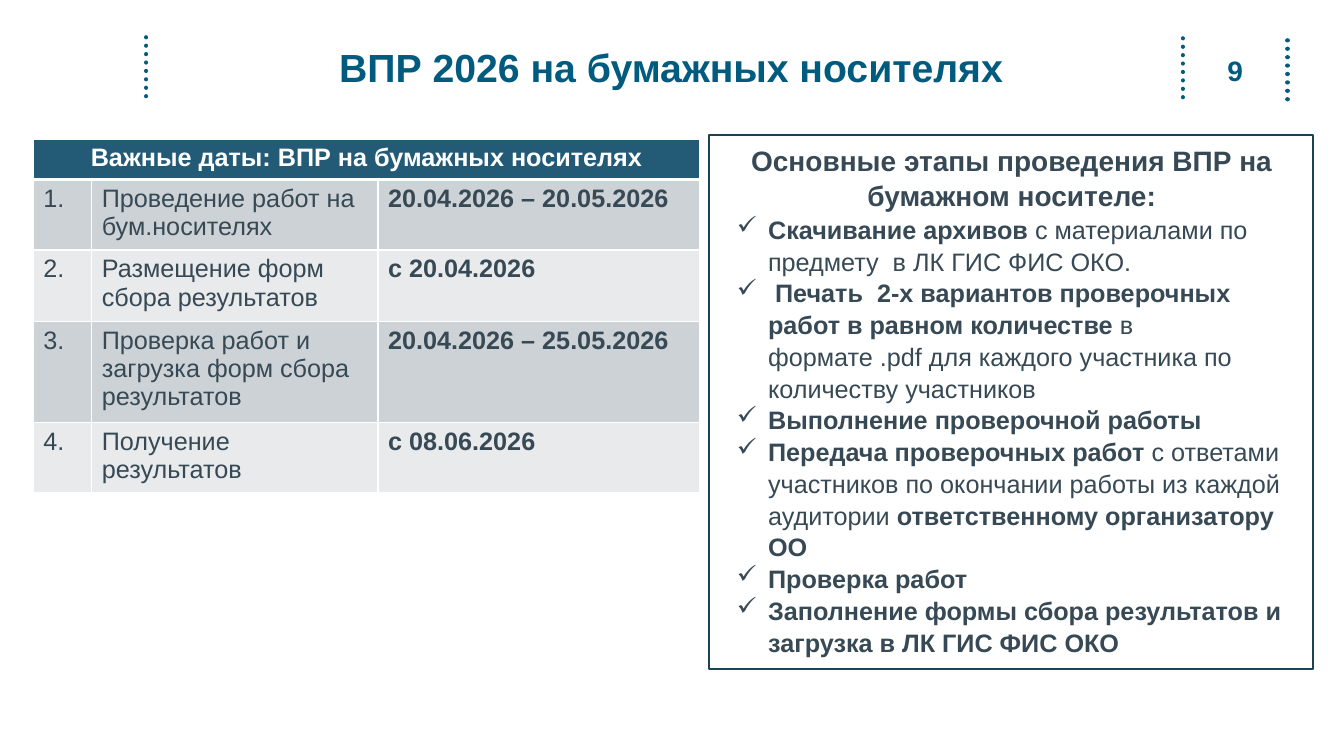
from dataclasses import dataclass

from lxml.etree import SubElement
from pptx import Presentation
from pptx.dml.color import RGBColor
from pptx.enum.dml import MSO_LINE
from pptx.enum.shapes import MSO_CONNECTOR, MSO_SHAPE
from pptx.enum.text import MSO_ANCHOR, PP_ALIGN
from pptx.oxml.ns import qn
from pptx.slide import Slide
from pptx.table import _Cell
from pptx.text.text import TextFrame, _Paragraph
from pptx.util import Emu, Pt

EMU_PER_PX = 9144  # 100 px to the inch


@dataclass(frozen=True)
class Theme:
    font: str = "Arial"
    accent: str = "005B7E"
    frame: str = "1A4358"
    header: str = "235B77"
    bands: tuple[str, str] = ("CDD2D6", "E8EAEC")
    text: str = "374955"
    white: str = "FFFFFF"
    title_size: int = 28
    heading_size: int = 20
    body_size: int = 18


@dataclass(frozen=True)
class Box:
    left: int
    top: int
    width: int
    height: int

    def emu(self) -> tuple[Emu, Emu, Emu, Emu]:
        return px(self.left), px(self.top), px(self.width), px(self.height)


@dataclass(frozen=True)
class DottedLine:
    x: int
    top: int
    bottom: int


@dataclass(frozen=True)
class Part:
    text: str
    bold: bool = True


@dataclass(frozen=True)
class DateRow:
    task: str
    dates: str
    height: int


THEME = Theme()
BULLET_INDENT = 31
COLUMN_WIDTHS = (58, 284, 319)
HEADER_HEIGHT = 39

DOTTED_LINES = (
    DottedLine(145, 37, 99),
    DottedLine(1173, 38, 99),
    DottedLine(1277, 40, 99),
)

DATE_ROWS = (
    DateRow("Проведение работ на бум.носителях", "20.04.2026 – 20.05.2026", 70),
    DateRow("Размещение форм сбора результатов", "с 20.04.2026", 71),
    DateRow("Проверка работ и загрузка форм сбора результатов", "20.04.2026 – 25.05.2026", 100),
    DateRow("Получение результатов", "с 08.06.2026", 70),
)

STAGES = (
    (Part("Скачивание архивов "), Part("с материалами по предмету  в ЛК ГИС ФИС ОКО.", False)),
    (
        Part(" Печать  2-х вариантов проверочных работ в равном количестве "),
        Part("в формате .pdf для каждого участника по количеству участников", False),
    ),
    (Part("Выполнение проверочной работы"),),
    (
        Part("Передача проверочных работ "),
        Part("с ответами  участников по окончании работы из каждой аудитории ", False),
        Part("ответственному организатору ОО"),
    ),
    (Part("Проверка работ"),),
    (Part("Заполнение формы сбора результатов и загрузка в ЛК ГИС ФИС ОКО"),),
)


def px(value: int) -> Emu:
    return Emu(value * EMU_PER_PX)


def color(value: str) -> RGBColor:
    return RGBColor.from_string(value)


def style_paragraph(paragraph: _Paragraph, size: int, font_color: str, bold: bool | None = None,
                    align: PP_ALIGN = PP_ALIGN.LEFT) -> None:
    paragraph.alignment = align
    font = paragraph.font
    font.name, font.size, font.bold = THEME.font, Pt(size), bold
    font.color.rgb = color(font_color)


def add_text_frame(slide: Slide, box: Box, anchor: MSO_ANCHOR) -> TextFrame:
    frame = slide.shapes.add_textbox(*box.emu()).text_frame
    frame.word_wrap = True
    frame.vertical_anchor = anchor
    return frame


def add_centered_text(slide: Slide, box: Box, text: str, size: int) -> None:
    paragraph = add_text_frame(slide, box, MSO_ANCHOR.MIDDLE).paragraphs[0]
    paragraph.text = text
    style_paragraph(paragraph, size, THEME.accent, True, PP_ALIGN.CENTER)


def add_dotted_line(slide: Slide, dotted: DottedLine) -> None:
    connector = slide.shapes.add_connector(
        MSO_CONNECTOR.STRAIGHT, px(dotted.x), px(dotted.top), px(dotted.x), px(dotted.bottom))
    connector.line.color.rgb = color(THEME.accent)
    connector.line.width = Pt(3)
    connector.line.dash_style = MSO_LINE.ROUND_DOT
    properties = connector._element.spPr
    properties.find(qn("a:ln")).set("cap", "rnd")
    SubElement(properties, qn("a:effectLst"))


def add_check_bullet(paragraph: _Paragraph) -> None:
    properties = paragraph._p.get_or_add_pPr()
    properties.set("marL", str(px(BULLET_INDENT)))
    properties.set("indent", str(-px(BULLET_INDENT)))
    SubElement(properties, qn("a:buChar"), char="✓")


def add_stages(slide: Slide) -> None:
    border = slide.shapes.add_shape(MSO_SHAPE.RECTANGLE, *Box(703, 134, 599, 530).emu())
    border.shadow.inherit = False
    border.fill.background()
    border.line.color.rgb = color(THEME.frame)
    border.line.width = Pt(1.5)

    frame = add_text_frame(slide, Box(721, 136, 565, 499), MSO_ANCHOR.TOP)
    heading = frame.paragraphs[0]
    heading.text = "Основные этапы проведения ВПР на бумажном носителе:"
    heading.line_spacing = 1.05
    style_paragraph(heading, THEME.heading_size, THEME.text, True, PP_ALIGN.CENTER)
    for stage in STAGES:
        paragraph = frame.add_paragraph()
        paragraph.line_spacing = 1.05
        add_check_bullet(paragraph)
        style_paragraph(paragraph, THEME.body_size, THEME.text)
        for part in stage:
            run = paragraph.add_run()
            run.text = part.text
            run.font.bold = part.bold


def style_cell(cell: _Cell, fill: str, top: int = 1, bottom: int = 1) -> None:
    """Give the cell its fill and white borders; top and bottom are in points."""
    properties = cell._tc.get_or_add_tcPr()
    for side, width in (("L", 1), ("R", 1), ("T", top), ("B", bottom)):
        line = SubElement(properties, qn(f"a:ln{side}"), w=str(Pt(width)))
        SubElement(SubElement(line, qn("a:solidFill")), qn("a:srgbClr"), val=THEME.white)
    cell.fill.solid()
    cell.fill.fore_color.rgb = color(fill)


def write_cell(cell: _Cell, text: str, font_color: str, bold: bool,
               align: PP_ALIGN = PP_ALIGN.LEFT) -> None:
    paragraph = cell.text_frame.paragraphs[0]
    paragraph.text = text
    style_paragraph(paragraph, THEME.body_size, font_color, bold, align)


def add_dates_table(slide: Slide) -> None:
    heights = (HEADER_HEIGHT, *(row.height for row in DATE_ROWS))
    box = Box(33, 138, sum(COLUMN_WIDTHS), sum(heights))
    table = slide.shapes.add_table(len(heights), len(COLUMN_WIDTHS), *box.emu()).table
    for column, width in zip(table.columns, COLUMN_WIDTHS):
        column.width = px(width)
    for table_row, height in zip(table.rows, heights):
        table_row.height = px(height)

    for cell in table.rows[0].cells:
        style_cell(cell, THEME.header, bottom=3)
    header = table.cell(0, 0)
    header.merge(table.cell(0, len(COLUMN_WIDTHS) - 1))
    write_cell(header, "Важные даты: ВПР на бумажных носителях", THEME.white, True, PP_ALIGN.CENTER)

    for number, row in enumerate(DATE_ROWS, start=1):
        values = (Part(f"{number}.", False), Part(row.task, False), Part(row.dates))
        for cell, value in zip(table.rows[number].cells, values):
            style_cell(cell, THEME.bands[(number - 1) % 2], top=3 if number == 1 else 1)
            write_cell(cell, value.text, THEME.text, value.bold)


def main() -> None:
    presentation = Presentation()
    presentation.slide_width, presentation.slide_height = px(1333), px(750)
    slide = presentation.slides.add_slide(presentation.slide_layouts[6])
    for dotted in DOTTED_LINES:
        add_dotted_line(slide, dotted)
    add_centered_text(slide, Box(1198, 43, 54, 53), "9", THEME.heading_size)
    add_centered_text(slide, Box(177, 37, 977, 58), "ВПР 2026 на бумажных носителях", THEME.title_size)
    add_stages(slide)
    add_dates_table(slide)
    presentation.save("out.pptx")


if __name__ == "__main__":
    main()
